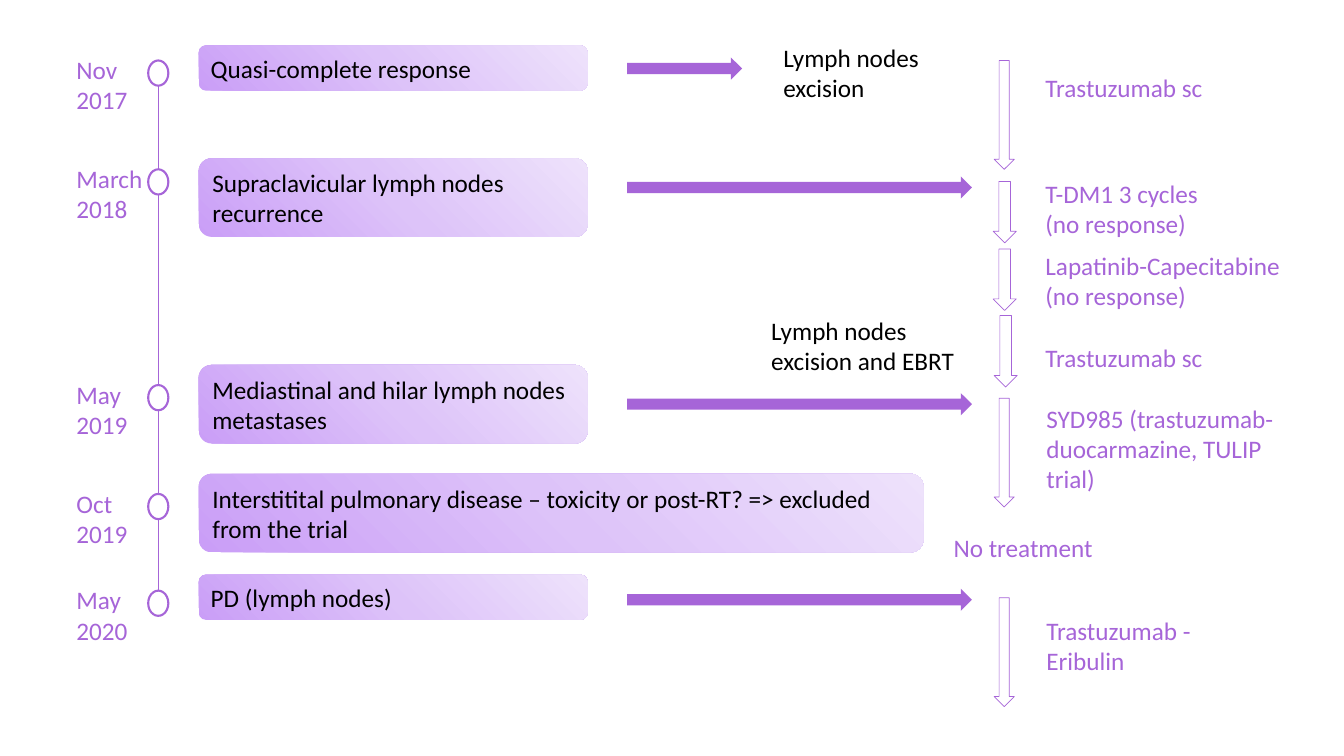
from copy import deepcopy
from dataclasses import dataclass
from itertools import pairwise

from lxml.etree import SubElement
from pptx import Presentation
from pptx.dml.color import RGBColor
from pptx.enum.shapes import MSO_CONNECTOR, MSO_SHAPE
from pptx.enum.text import MSO_ANCHOR, MSO_AUTO_SIZE, PP_ALIGN
from pptx.oxml.ns import qn
from pptx.util import Pt

PX = 9144  # 100 px to the inch


@dataclass(frozen=True)
class Theme:
    font: str = "Calibri"
    size: int = 18
    main: str = "A665D8"
    ink: str = "000000"
    fade: tuple = ((0, "CA9EF7"), (0.5, "DDC3F9"), (1, "EEE2FB"))
    ring: float = 1.5
    rail: float = 1
    edge: float = 0.5


def rgb(code):
    return RGBColor.from_string(code)


def apply(item, form):
    for name, value in form.items():
        setattr(item, name, value)


class Board:
    def __init__(self, slide, theme):
        self.slide = slide
        self.theme = theme

    def letter(self, shape, text, color, anchor):
        """Put styled text into a shape."""
        frame = shape.text_frame
        apply(frame, {"text": text, "word_wrap": True, "vertical_anchor": anchor,
                      "auto_size": MSO_AUTO_SIZE.SHAPE_TO_FIT_TEXT})
        for para in frame.paragraphs:
            para.alignment = PP_ALIGN.LEFT
            for run in para.runs:
                apply(run.font, {"name": self.theme.font, "size": Pt(self.theme.size)})
                run.font.color.rgb = rgb(color)

    def label(self, area, text, color):
        box = self.slide.shapes.add_textbox(*(n * PX for n in area))
        self.letter(box, text, color, MSO_ANCHOR.TOP)

    def shape(self, kind, area):
        item = self.slide.shapes.add_shape(kind, *(n * PX for n in area))
        item.shadow.inherit = False
        return item

    def hollow(self, kind, area, width):
        """Draw an unfilled shape with an outline."""
        item = self.shape(kind, area)
        item.fill.background()
        item.line.color.rgb = rgb(self.theme.main)
        item.line.width = Pt(width)

    def arrow(self, area):
        item = self.shape(MSO_SHAPE.RIGHT_ARROW, area)
        item.fill.solid()
        item.fill.fore_color.rgb = rgb(self.theme.main)
        item.line.fill.background()

    def event(self, area, text):
        """Draw a rounded box with a diagonal fade."""
        item = self.shape(MSO_SHAPE.ROUNDED_RECTANGLE, area)
        item.line.fill.background()
        item.fill.gradient()
        item.fill.gradient_angle = 45
        stops = item.element.find(".//" + qn("a:gsLst"))
        stops.append(deepcopy(stops[-1]))
        for stop, (place, color) in zip(item.fill.gradient_stops, self.theme.fade):
            stop.position = place
            stop.color.rgb = rgb(color)
        self.letter(item, text, self.theme.ink, MSO_ANCHOR.MIDDLE)

    def rail(self, x, top, end):
        line = self.slide.shapes.add_connector(
            MSO_CONNECTOR.STRAIGHT, x * PX, top * PX, x * PX, end * PX)
        line.line.color.rgb = rgb(self.theme.main)
        line.line.width = Pt(self.theme.rail)
        SubElement(line.element.spPr, qn("a:effectLst"))


# date, dot top, box (top, width, height), text, arrow (top, width)
EVENTS = [
    ("Nov 2017", 60, (45, 386, 45), "Quasi-complete response", (57, 114)),
    ("March 2018", 168, (157, 386, 78), "Supraclavicular lymph nodes recurrence", (175, 342)),
    ("May 2019", 382, (362, 386, 78), "Mediastinal and hilar lymph nodes metastases", (390, 342)),
    ("Oct 2019", 490, (470, 719, 78),
     "Interstitital pulmonary disease – toxicity or post-RT? => excluded from the trial", None),
    ("May 2020", 586, (570, 386, 45), "PD (lymph nodes)", (584, 342)),
]
SURGERY = [
    ((767, 37, 198, 71), "Lymph nodes excision"),
    ((755, 308, 207, 71), "Lymph nodes excision and EBRT"),
]
# down arrow, label area, text
DRUGS = [
    ((986, 60, 20, 108), (1027, 67, 184, 40), "Trastuzumab sc"),
    ((985, 180, 23, 61), (1027, 172, 184, 71), "T-DM1 3 cycles\n(no response)"),
    ((985, 247, 23, 61), (1027, 243, 273, 71), "Lapatinib-Capecitabine\n(no response)"),
    ((986, 313, 23, 71), (1027, 335, 184, 40), "Trastuzumab sc"),
    ((986, 395, 20, 108), (1028, 395, 256, 101),
     "SYD985 (trastuzumab-duocarmazine, TULIP trial)"),
    (None, (936, 523, 240, 40), "No treatment"),
    ((986, 593, 20, 108), (1028, 605, 184, 71), "Trastuzumab - Eribulin"),
]
DOT_X, DOT_W, DOT_H = 147, 20, 25


def main():
    deck = Presentation()
    apply(deck, {"slide_width": 1333 * PX, "slide_height": 750 * PX})
    theme = Theme()
    board = Board(deck.slides.add_slide(deck.slide_layouts[6]), theme)

    for date, dot, (top, width, height), text, arrow in EVENTS:
        board.label((66, dot - 11, 91, 71), date, theme.main)
        board.hollow(MSO_SHAPE.FLOWCHART_CONNECTOR, (DOT_X, dot, DOT_W, DOT_H), theme.ring)
        board.event((197, top, width, height), text)
        if arrow:
            board.arrow((622, *arrow, 22))
    for event, after in pairwise(EVENTS):
        board.rail(DOT_X + DOT_W // 2, event[1] + DOT_H, after[1])

    for area, text in SURGERY:
        board.label(area, text, theme.ink)
    for arrow, area, text in DRUGS:
        if arrow:
            board.hollow(MSO_SHAPE.DOWN_ARROW, arrow, theme.edge)
        board.label(area, text, theme.main)
    deck.save("out.pptx")


if __name__ == "__main__":
    main()
